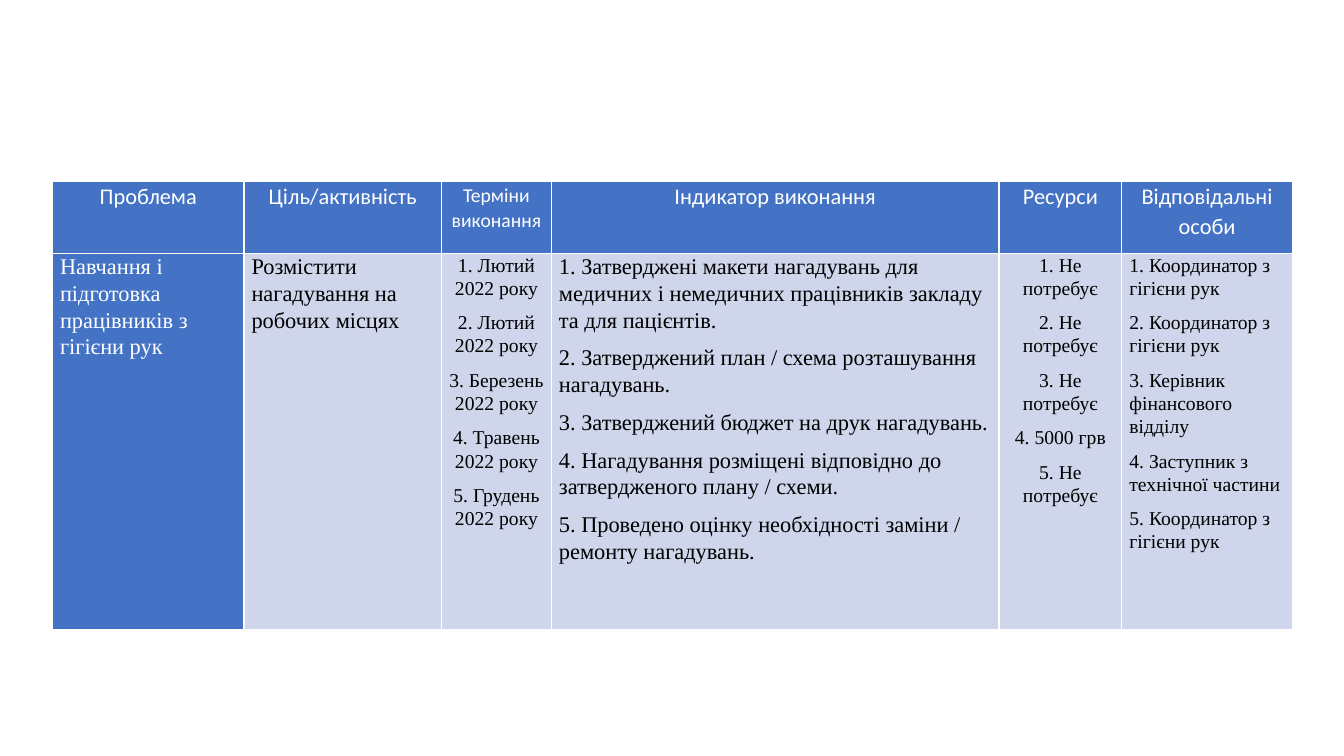
from dataclasses import dataclass

from lxml import etree
from pptx import Presentation
from pptx.dml.color import RGBColor
from pptx.enum.text import PP_ALIGN
from pptx.oxml.ns import qn
from pptx.util import Pt

LEFT, CENTER = PP_ALIGN.LEFT, PP_ALIGN.CENTER


@dataclass(frozen=True)
class Theme:
    accent: str = "4472C4"
    band: str = "CFD5EA"
    light: str = "FFFFFF"
    dark: str = "000000"
    head_font: str = "Calibri"
    body_font: str = "Times New Roman"
    large: int = 16
    small: int = 14
    border: int = 1
    side_margin: float = 5.4
    line_spacing: float = 1.07
    space_after: int = 8


@dataclass(frozen=True)
class Column:
    title: str
    width: float
    items: tuple
    title_size: int = Theme.large
    size: int = Theme.large
    align: PP_ALIGN = LEFT


COLUMNS = (
    Column("Проблема", 136.8, ("Навчання і підготовка працівників з гігієни рук",)),
    Column("Ціль/активність", 141.1, ("Розмістити нагадування на робочих місцях",)),
    Column("Терміни виконання", 78.5,
           ("Лютий 2022 року", "Лютий 2022 року", "Березень 2022 року",
            "Травень 2022 року", "Грудень 2022 року"),
           title_size=Theme.small, size=Theme.small, align=CENTER),
    Column("Індикатор виконання", 319.7,
           ("Затверджені макети нагадувань для медичних і немедичних "
            "працівників закладу та для пацієнтів.",
            "Затверджений план / схема розташування нагадувань.",
            "Затверджений бюджет на друк нагадувань.",
            "Нагадування розміщені відповідно до затвердженого плану / схеми.",
            "Проведено оцінку необхідності заміни / ремонту нагадувань.")),
    Column("Ресурси", 87.8,
           ("Не потребує", "Не потребує", "Не потребує", "5000 грв", "Не потребує"),
           size=Theme.small, align=CENTER),
    Column("Відповідальні особи", 121.7,
           ("Координатор з гігієни рук", "Координатор з гігієни рук",
            "Керівник фінансового відділу", "Заступник з технічної частини",
            "Координатор з гігієни рук"),
           size=Theme.small),
)
ROW_HEIGHTS = (51.1, 268.6)


def set_all(obj, values):
    for name, value in values.items():
        setattr(obj, name, value)


def numbered(items):
    """Number the items, unless there is only one."""
    if len(items) == 1:
        return items
    return [f"{i}. {item}" for i, item in enumerate(items, 1)]


class SlideBuilder:
    def __init__(self, slide, theme):
        self.s = slide
        self.theme = theme

    def borders(self, cell):
        tc_pr = cell._tc.get_or_add_tcPr()
        for side in ("lnL", "lnR", "lnT", "lnB"):
            ln = etree.SubElement(tc_pr, qn(f"a:{side}"), w=str(Pt(self.theme.border)))
            fill = etree.SubElement(ln, qn("a:solidFill"))
            etree.SubElement(fill, qn("a:srgbClr"), val=self.theme.light)

    def cell(self, cell, texts, fill, color, font, size, align):
        t = self.theme
        side = Pt(t.side_margin)
        set_all(cell, {"margin_left": side, "margin_right": side,
                       "margin_top": 0, "margin_bottom": 0})
        self.borders(cell)
        cell.fill.solid()
        cell.fill.fore_color.rgb = RGBColor.from_string(fill)
        tf = cell.text_frame
        for i, text in enumerate(texts):
            p = tf.add_paragraph() if i else tf.paragraphs[0]
            set_all(p, {"alignment": align, "line_spacing": t.line_spacing,
                        "space_after": Pt(t.space_after)})
            r = p.add_run()
            r.text = text
            set_all(r.font, {"name": font, "size": Pt(size), "bold": False})
            r.font.color.rgb = RGBColor.from_string(color)

    def table(self, left, top, columns, heights):
        t = self.theme
        width = sum(c.width for c in columns)
        tbl = self.s.shapes.add_table(len(heights), len(columns), Pt(left), Pt(top),
                                      Pt(width), Pt(sum(heights))).table
        set_all(tbl, {"first_row": True, "first_col": True, "horz_banding": False})
        for row, height in zip(tbl.rows, heights):
            row.height = Pt(height)
        for i, col in enumerate(columns):
            tbl.columns[i].width = Pt(col.width)
            self.cell(tbl.cell(0, i), [col.title], t.accent, t.light,
                      t.head_font, col.title_size, CENTER)
            fill, color = (t.band, t.dark) if i else (t.accent, t.light)
            self.cell(tbl.cell(1, i), numbered(col.items), fill, color,
                      t.body_font, col.size, col.align)


def main():
    prs = Presentation()
    set_all(prs, {"slide_width": Pt(960), "slide_height": Pt(540)})
    s = prs.slides.add_slide(prs.slide_layouts[6])
    SlideBuilder(s, Theme()).table(37.5, 129.8, COLUMNS, ROW_HEIGHTS)
    prs.save("out.pptx")


if __name__ == "__main__":
    main()
